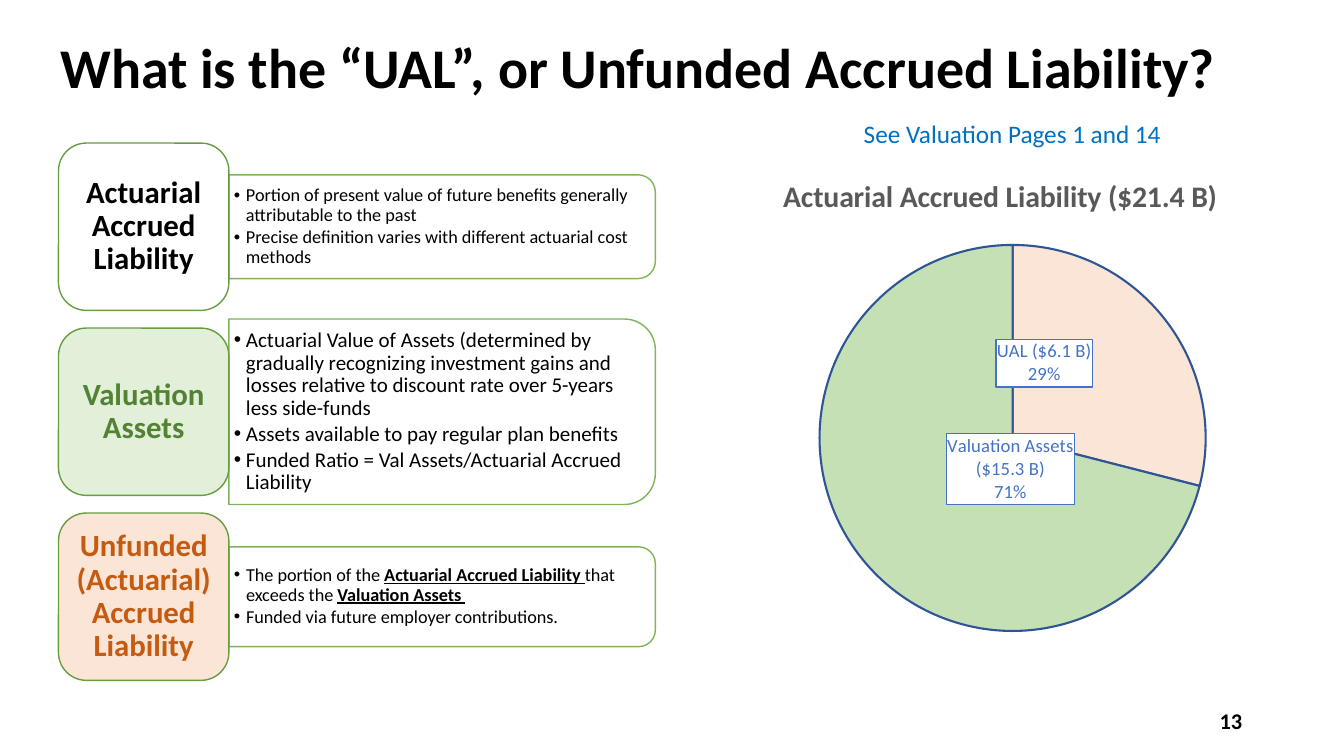
from dataclasses import dataclass
from lxml.etree import SubElement
from pptx import Presentation
from pptx.chart.data import CategoryChartData
from pptx.dml.color import RGBColor
from pptx.enum.chart import XL_CHART_TYPE
from pptx.enum.shapes import MSO_SHAPE
from pptx.enum.text import MSO_ANCHOR, PP_ALIGN
from pptx.oxml import parse_xml
from pptx.oxml.ns import nsdecls, qn
from pptx.util import Emu, Inches, Pt


@dataclass(frozen=True)
class Theme:
    font: str = "Calibri"
    black: str = "000000"
    white: str = "FFFFFF"
    gray: str = "595959"
    blue: str = "0070C0"
    navy: str = "2F5597"
    label: str = "4472C4"
    edge: str = "669D40"
    rim: str = "70AD47"
    green: str = "548235"
    mint: str = "E2F0D9"
    leaf: str = "C5E0B4"
    rust: str = "C55A11"
    peach: str = "FBE5D6"
    title: float = 40
    head: float = 22
    chart: float = 21.3
    note: float = 18
    page: float = 16
    tag: float = 13.3


T = Theme()
WIDE, HIGH = Inches(13.33), Inches(7.5)
LEFT, TOP = 4.35, 18.93
CARD_W, CARD_H, PITCH = 12.68, 22.13, 24.47
PANEL_W = 31.73

CARDS = [
    ("Actuarial Accrued Liability", T.black, T.white, 13.73, 13, [
        "Portion of present value of future benefits generally attributable to the past",
        "Precise definition varies with different actuarial cost methods"]),
    ("Valuation Assets", T.green, T.mint, 24.53, 15, [
        "Actuarial Value of Assets (determined by gradually recognizing investment gains "
        "and losses relative to discount rate over 5-years less side-funds",
        "Assets available to pay regular plan benefits",
        "Funded Ratio = Val Assets/Actuarial Accrued Liability"]),
    ("Unfunded (Actuarial) Accrued Liability", T.rust, T.peach, 13.2, 13, [
        "The portion of the |Actuarial Accrued Liability |that exceeds the |Valuation Assets |",
        "Funded via future employer contributions."]),
]
SLICES = [("UAL ($6.1 B)", 29, T.peach, -0.1, 0.03),
          ("Valuation Assets ($15.3 B)", 71, T.leaf, 0.12, -0.09)]


def area(x, y, w, h):
    return [Emu(int(share * size / 100))
            for share, size in zip((x, y, w, h), (WIDE, HIGH, WIDE, HIGH))]


def style(font, size, color, bold=False):
    font.name, font.size, font.bold = T.font, Pt(size), bold
    font.color.rgb = RGBColor.from_string(color)


def write(frame, *lines, size, color=T.black, bold=False, align=PP_ALIGN.LEFT,
          anchor=MSO_ANCHOR.MIDDLE, inset=(0.1, 0.05, 0.1, 0.05),
          leading=1.0, after=0, bullet=False):
    frame.word_wrap = True
    frame.vertical_anchor = anchor
    (frame.margin_left, frame.margin_top,
     frame.margin_right, frame.margin_bottom) = map(Inches, inset)
    for i, line in enumerate(lines):
        para = frame.add_paragraph() if i else frame.paragraphs[0]
        para.alignment, para.line_spacing = align, leading
        para.space_after = Pt(after)
        for j, part in enumerate(line.split("|")):
            if part:
                run = para.add_run()
                run.text = part
                style(run.font, size, color, bold or j % 2 == 1)
                run.font.underline = j % 2 == 1
        if bullet:
            props = para._p.get_or_add_pPr()
            props.set("marL", str(Inches(0.12)))
            props.set("indent", str(-Inches(0.12)))
            SubElement(props, qn("a:buFont"), typeface="Arial")
            SubElement(props, qn("a:buChar"), char="•")


def label(slide, box, text, **form):
    write(slide.shapes.add_textbox(*box).text_frame, text, **form)


def block(slide, kind, box, fill, line):
    shape = slide.shapes.add_shape(kind, *box)
    shape.shadow.inherit = False
    shape.fill.solid()
    shape.fill.fore_color.rgb = RGBColor.from_string(fill)
    shape.line.color.rgb = RGBColor.from_string(line)
    shape.line.width = Pt(1)
    return shape


def panel(slide, mid, high, size, lines):
    x, y, w, h = area(LEFT + CARD_W, mid - high / 2, PANEL_W, high)
    turned = (x + (w - h) // 2, y + (h - w) // 2, h, w)
    shape = block(slide, MSO_SHAPE.ROUND_2_SAME_RECTANGLE, turned, T.white, T.rim)
    shape.rotation = 90
    for color in shape._element.spPr.iter(qn("a:srgbClr")):
        SubElement(color, qn("a:alpha"), val="90000")
    box = slide.shapes.add_textbox(x, y, w - h // 20, h)
    write(box.text_frame, *lines, size=size, leading=0.9, after=size * 0.15,
          bullet=True, inset=(0.05, 0.03, 0.05, 0.03))


def card(slide, row, name, color, fill, high, size, lines):
    top = TOP + row * PITCH
    panel(slide, top + CARD_H / 2, high, size, lines)
    shape = block(slide, MSO_SHAPE.ROUNDED_RECTANGLE,
                  area(LEFT, top, CARD_W, CARD_H), fill, T.edge)
    write(shape.text_frame, name, size=T.head, color=color, bold=True, leading=0.9,
          align=PP_ALIGN.CENTER, inset=(0.09, 0.05, 0.09, 0.05))


def layout(x, y, w=None, h=None):
    tags = "" if w else '<c:xMode val="edge"/><c:yMode val="edge"/>'
    if w:
        tags = ('<c:layoutTarget val="inner"/><c:xMode val="edge"/><c:yMode val="edge"/>')
    tags += f'<c:x val="{x}"/><c:y val="{y}"/>'
    if w:
        tags += f'<c:w val="{w}"/><c:h val="{h}"/>'
    return parse_xml(f'<c:layout {nsdecls("c")}><c:manualLayout>{tags}'
                     '</c:manualLayout></c:layout>')


def tag(index, x, y):
    return parse_xml(
        f'<c:dLbl {nsdecls("c", "a")}><c:idx val="{index}"/>'
        f'<c:layout><c:manualLayout><c:x val="{x}"/><c:y val="{y}"/></c:manualLayout></c:layout>'
        f'<c:spPr><a:solidFill><a:srgbClr val="{T.white}"/></a:solidFill>'
        f'<a:ln w="12700"><a:solidFill><a:srgbClr val="{T.label}"/></a:solidFill></a:ln></c:spPr>'
        f'<c:txPr><a:bodyPr/><a:p><a:pPr><a:defRPr sz="{int(T.tag * 100)}" b="0"><a:solidFill>'
        f'<a:srgbClr val="{T.label}"/></a:solidFill><a:latin typeface="{T.font}"/></a:defRPr>'
        '</a:pPr><a:endParaRPr lang="en-US"/></a:p></c:txPr>'
        '<c:dLblPos val="inEnd"/><c:showLegendKey val="0"/><c:showVal val="0"/>'
        '<c:showCatName val="1"/><c:showSerName val="0"/><c:showPercent val="1"/>'
        '<c:showBubbleSize val="0"/><c:separator>\n</c:separator></c:dLbl>')


def pie(slide, box):
    data = CategoryChartData()
    data.categories = [part[0] for part in SLICES]
    data.add_series("Series 1", [part[1] for part in SLICES])
    chart = slide.shapes.add_chart(XL_CHART_TYPE.PIE, *box, data).chart
    style(chart.font, 10, T.black)
    chart.has_legend = False
    frame = chart.chart_title.text_frame
    frame.text = "Actuarial Accrued Liability ($21.4 B)"
    style(frame.paragraphs[0].runs[0].font, T.chart, T.gray, True)
    title = chart.chart_title._element
    for old in title.findall(qn("c:layout")):
        title.remove(old)
    title.find(qn("c:tx")).addnext(layout(0.18, 0.05))
    plot = chart.plots[0]
    plot.vary_by_categories = False
    space = plot._element.getparent()
    for old in space.findall(qn("c:layout")):
        space.remove(old)
    space.insert(0, layout(0.24, 0.19, 0.57, 0.72))
    labels = plot.series[0].data_labels
    labels.show_value = False
    labels.show_percentage = labels.show_category_name = True
    style(labels.font, T.tag, T.label)
    for i, (_, _, color, x, y) in enumerate(SLICES):
        form = plot.series[0].points[i].format
        form.fill.solid()
        form.fill.fore_color.rgb = RGBColor.from_string(color)
        form.line.color.rgb = RGBColor.from_string(T.navy)
        form.line.width = Pt(1.5)
        labels._element.insert(i, tag(i, x, y))


def main():
    deck = Presentation()
    deck.slide_width, deck.slide_height = WIDE, HIGH
    slide = deck.slides.add_slide(deck.slide_layouts[6])
    label(slide, area(0, -0.4, 100, 19.33), "What is the “UAL”, or Unfunded Accrued Liability?",
          size=T.title, bold=True, leading=0.9, inset=(0.6, 0.05, 0.1, 0.05))
    label(slide, area(70.67, 92.67, 22.5, 5.33), "13",
          size=T.page, bold=True, align=PP_ALIGN.RIGHT)
    pie(slide, area(48.76, 18.93, 50.64, 70.93))
    for row, item in enumerate(CARDS):
        card(slide, row, *item)
    label(slide, area(61.89, 14.93, 26.86, 5.33), "See Valuation Pages 1 and 14",
          size=T.note, color=T.blue, align=PP_ALIGN.CENTER, anchor=MSO_ANCHOR.TOP)
    deck.save("out.pptx")


if __name__ == "__main__":
    main()
